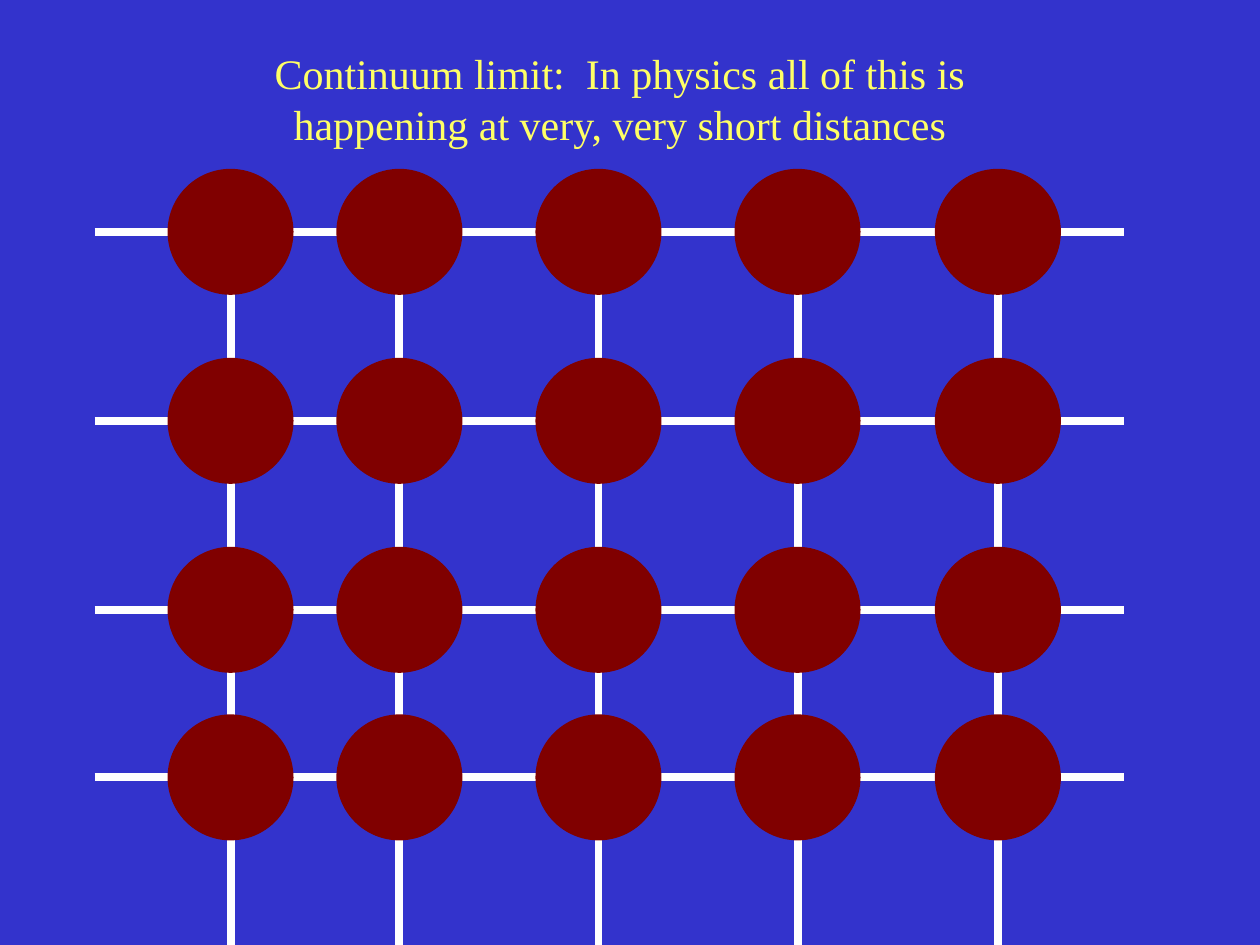
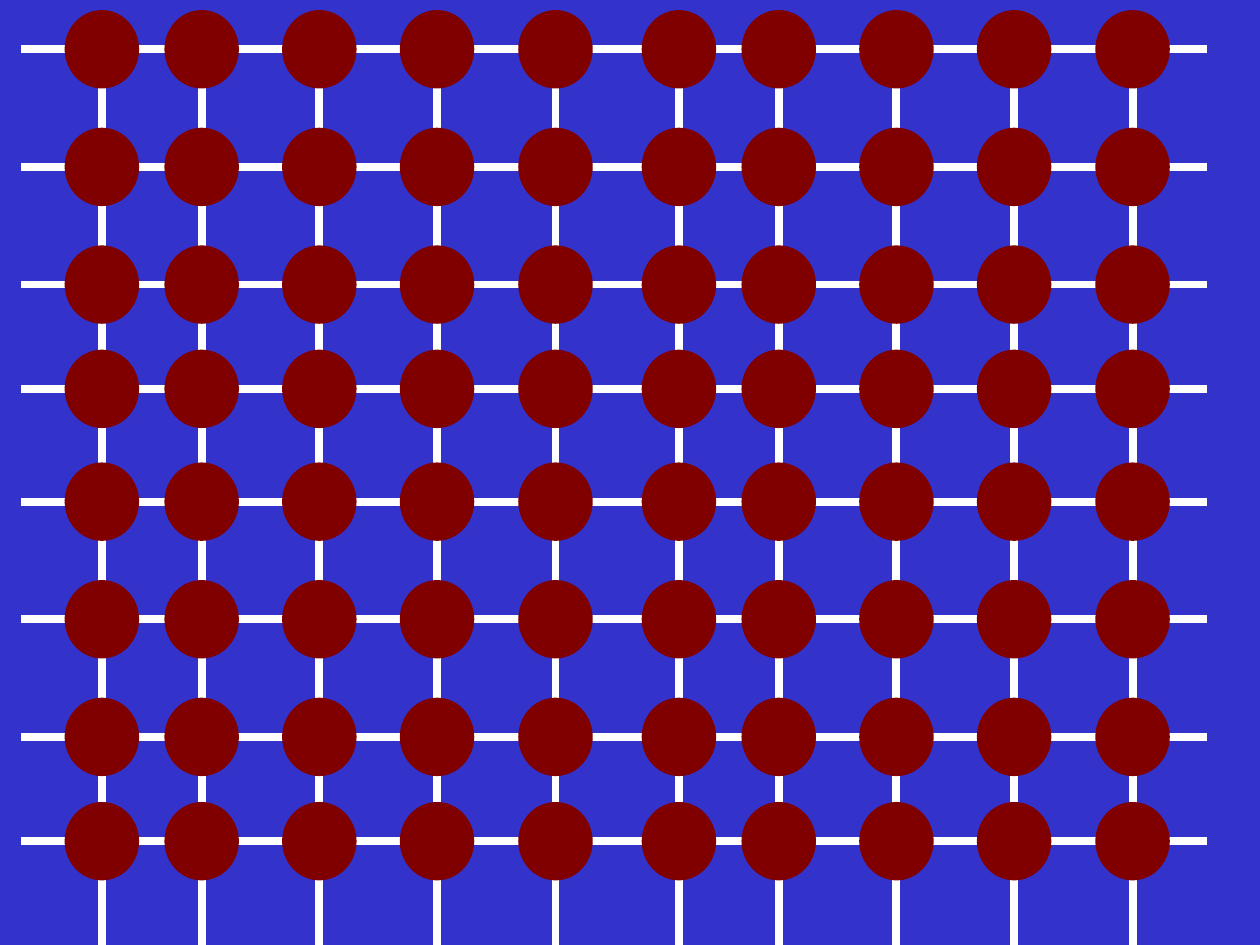
from dataclasses import dataclass

from lxml import etree
from pptx import Presentation
from pptx.dml.color import RGBColor
from pptx.enum.shapes import MSO_CONNECTOR, MSO_SHAPE
from pptx.enum.text import MSO_AUTO_SIZE, PP_ALIGN
from pptx.oxml.ns import qn
from pptx.shapes.group import GroupShape
from pptx.slide import Slide
from pptx.util import Inches, Pt

STRAIGHT = MSO_CONNECTOR.STRAIGHT
OVAL = MSO_SHAPE.OVAL
CENTER = PP_ALIGN.CENTER
FIT_SHAPE = MSO_AUTO_SIZE.SHAPE_TO_FIT_TEXT

BACKGROUND = "3333CC"
BOND_COLOR = "FFFFFF"
NODE_COLOR = "800000"
TITLE_COLOR = "FFFF66"
FONT = "Times New Roman"
BOND_WIDTH = Pt(4.5)

# Unscaled lattice, measured from its top left corner in inches
UNIT_WIDTH, UNIT_HEIGHT = 8.17, 6.17
COLUMNS = (1.08, 2.42, 4.0, 5.58, 7.17)
ROWS = (0.5, 2.0, 3.5, 4.83)
BOND_TOP = 0.08
NODE_SIZE = 1.0

TITLE_LINES = (
    "Continuum limit:  In physics all of this is",
    "happening at very, very short distances",
)


@dataclass(frozen=True)
class Lattice:
    left: float
    top: float
    width: float
    height: float

    def x(self, unit_x: float) -> float:
        return self.left + unit_x * self.width / UNIT_WIDTH

    def y(self, unit_y: float) -> float:
        return self.top + unit_y * self.height / UNIT_HEIGHT


LARGE_LATTICE = Lattice(0.75, 1.34, UNIT_WIDTH, UNIT_HEIGHT)
SMALL_LATTICES = [
    Lattice(left, top, 4.83, 3.84) for left in (0.17, 4.75) for top in (0.08, 3.67)
]


def rgb(color: str) -> RGBColor:
    return RGBColor.from_string(color)


def add_slide(prs: Presentation) -> Slide:
    s = prs.slides.add_slide(prs.slide_layouts[6])
    s.background.fill.solid()
    s.background.fill.fore_color.rgb = rgb(BACKGROUND)
    return s


def add_bond(group: GroupShape, x1: float, y1: float, x2: float, y2: float) -> None:
    ends = [Inches(v) for v in (x1, y1, x2, y2)]
    bond = group.shapes.add_connector(STRAIGHT, *ends)
    bond.line.color.rgb = rgb(BOND_COLOR)
    bond.line.width = BOND_WIDTH
    etree.SubElement(bond._element.spPr, qn("a:effectLst"))


def add_node(group: GroupShape, left: float, top: float, width: float, height: float) -> None:
    box = [Inches(v) for v in (left, top, width, height)]
    node = group.shapes.add_shape(OVAL, *box)
    node.shadow.inherit = False
    node.fill.solid()
    node.fill.fore_color.rgb = rgb(NODE_COLOR)
    node.line.fill.background()


def add_lattice(s: Slide, lattice: Lattice) -> None:
    """Draw the vertical bonds first, then each row's bond under its nodes."""
    group = s.shapes.add_group_shape()
    right, bottom = lattice.x(UNIT_WIDTH), lattice.y(UNIT_HEIGHT)
    for column in COLUMNS:
        x = lattice.x(column)
        add_bond(group, x, lattice.y(BOND_TOP), x, bottom)
    node_width = NODE_SIZE * lattice.width / UNIT_WIDTH
    node_height = NODE_SIZE * lattice.height / UNIT_HEIGHT
    for row in ROWS:
        y = lattice.y(row)
        add_bond(group, lattice.left, y, right, y)
        for column in COLUMNS:
            left = lattice.x(column) - node_width / 2
            add_node(group, left, y - node_height / 2, node_width, node_height)


def add_title(s: Slide) -> None:
    box = s.shapes.add_textbox(Inches(2.05), Inches(0.33), Inches(5.74), Inches(0.91))
    tf = box.text_frame
    tf.word_wrap = False
    tf.auto_size = FIT_SHAPE
    tf.text = "\n".join(TITLE_LINES)
    for p in tf.paragraphs:
        p.alignment = CENTER
        p.font.name = FONT
        p.font.size = Pt(24)
        p.font.color.rgb = rgb(TITLE_COLOR)


def main() -> None:
    prs = Presentation()
    prs.slide_width, prs.slide_height = Inches(10), Inches(7.5)

    s = add_slide(prs)
    add_lattice(s, LARGE_LATTICE)
    add_title(s)

    s = add_slide(prs)
    for lattice in SMALL_LATTICES:
        add_lattice(s, lattice)

    prs.save("out.pptx")


if __name__ == "__main__":
    main()
